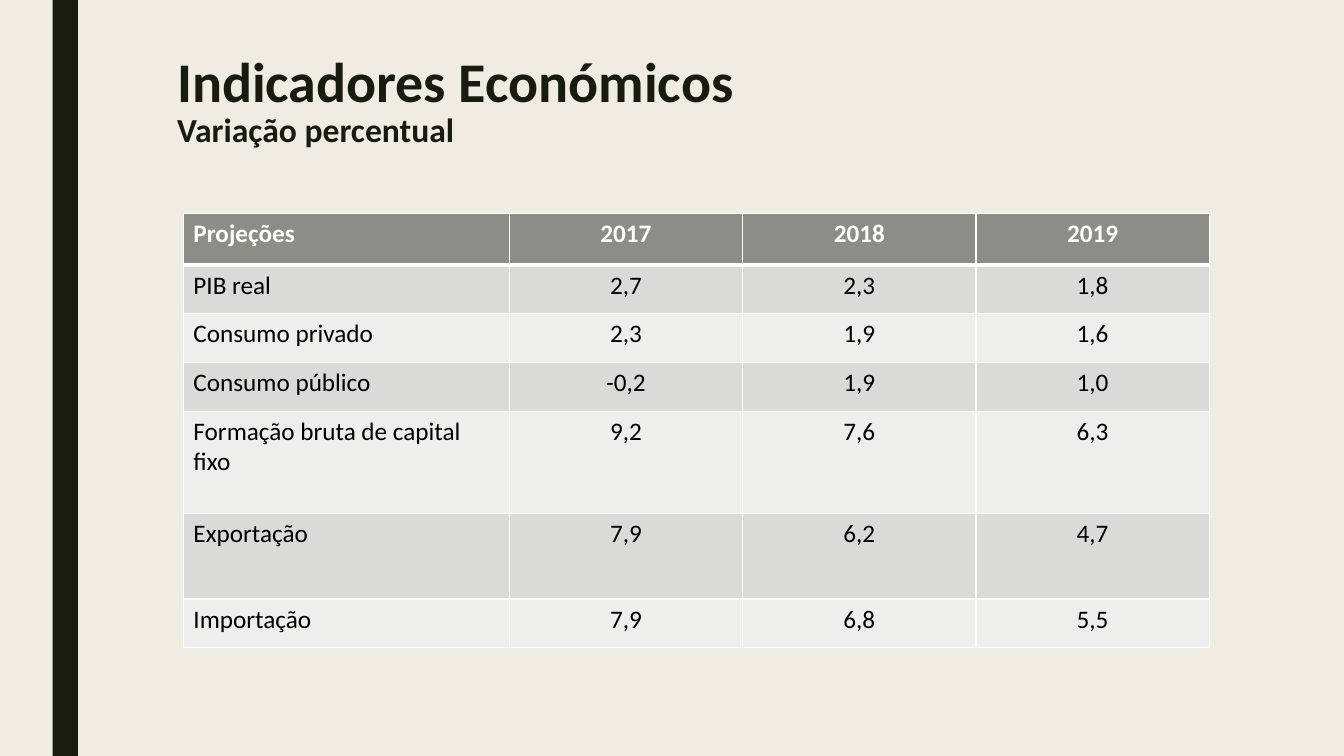
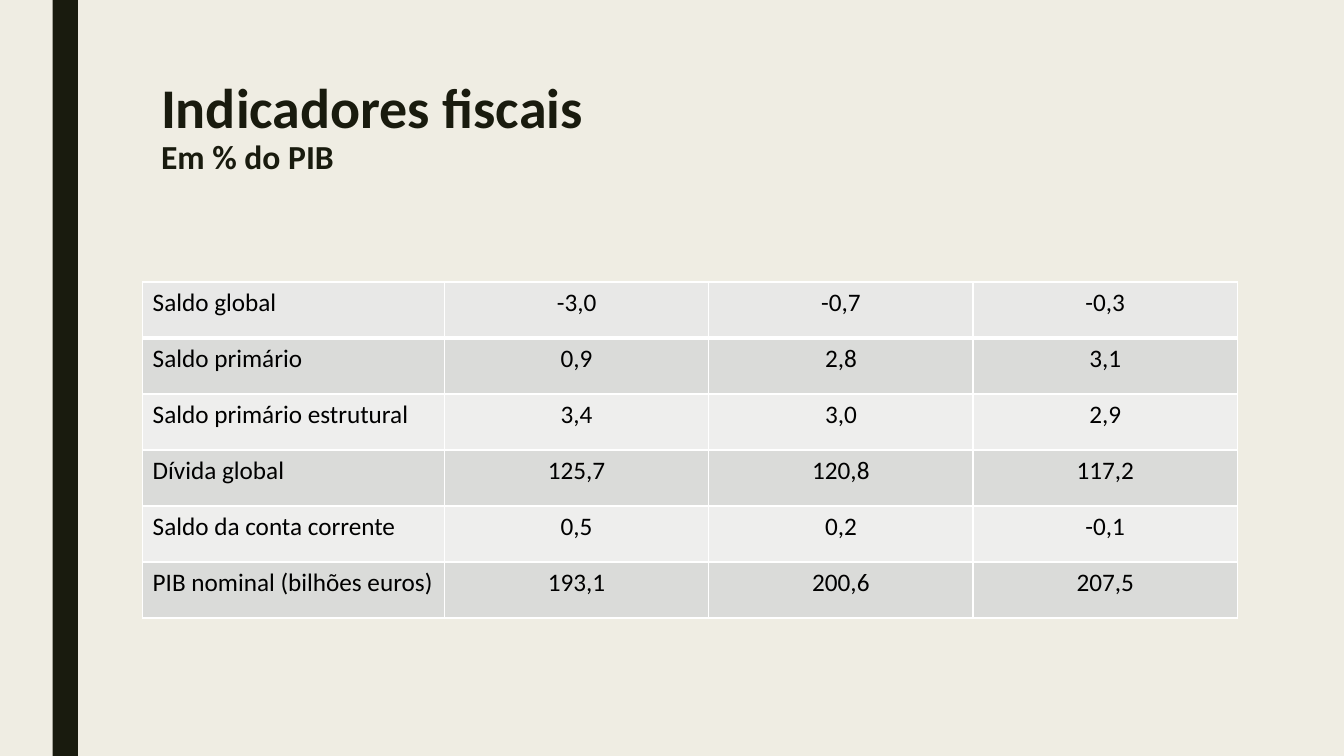
from lxml import etree
from pptx import Presentation
from pptx.dml.color import RGBColor
from pptx.enum.shapes import MSO_SHAPE
from pptx.enum.text import PP_ALIGN
from pptx.oxml.ns import qn
from pptx.util import Pt

RECT = MSO_SHAPE.RECTANGLE
LEFT, CENTER = PP_ALIGN.LEFT, PP_ALIGN.CENTER

FONT = "Calibri"
CREAM = RGBColor(0xEF, 0xED, 0xE3)
DARK = RGBColor(0x19, 0x1B, 0x0E)
BLACK = RGBColor(0, 0, 0)
WHITE = RGBColor(0xFF, 0xFF, 0xFF)
GRAY = RGBColor(0x8C, 0x8D, 0x86)
PALE = RGBColor(0xE8, 0xE8, 0xE7)
BANDS = RGBColor(0xDA, 0xDB, 0xD9), RGBColor(0xEE, 0xEE, 0xED)

# Content: places and sizes in points
SLIDES = [
    {
        "title": "Indicadores Económicos",
        "sub": "Variação percentual",
        "box": (119.5, 35.3, 756, 154.8),
        "spot": (131, 152.3),
        "cols": [232.8, 166.7, 166.7, 166.7],
        "heights": [37, 34.8, 34.8, 34.8, 73.4, 60.9, 34.8],
        "head": True,
        "rows": [
            ("Projeções", "2017", "2018", "2019"),
            ("PIB real", "2,7", "2,3", "1,8"),
            ("Consumo privado", "2,3", "1,9", "1,6"),
            ("Consumo público", "-0,2", "1,9", "1,0"),
            ("Formação bruta de capital fixo", "9,2", "7,6", "6,3"),
            ("Exportação", "7,9", "6,2", "4,7"),
            ("Importação", "7,9", "6,8", "5,5"),
        ],
    },
    {
        "title": "Indicadores fiscais",
        "sub": "Em % do PIB",
        "box": (108, 54, 756, 116.6),
        "spot": (101.9, 201.5),
        "cols": [215.6, 188.8, 188.8, 188.8],
        "heights": [40] * 6,
        "head": False,
        "rows": [
            ("Saldo global", "-3,0", "-0,7", "-0,3"),
            ("Saldo primário", "0,9", "2,8", "3,1"),
            ("Saldo primário estrutural", "3,4", "3,0", "2,9"),
            ("Dívida global", "125,7", "120,8", "117,2"),
            ("Saldo da conta corrente", "0,5", "0,2", "-0,1"),
            ("PIB nominal (bilhões euros)", "193,1", "200,6", "207,5"),
        ],
    },
]


def write(para, text, size=18, color=BLACK, bold=False, align=LEFT, space=1.0):
    para.alignment = align
    para.line_spacing = space
    run = para.add_run()
    run.text = text
    font = run.font
    font.name, font.size, font.bold = FONT, Pt(size), bold
    font.color.rgb = color


def add_base(slide):
    # Dark band at the left edge
    band = slide.shapes.add_shape(RECT, Pt(37.6), 0, Pt(18), Pt(540))
    band.shadow.inherit = False
    band.fill.solid()
    band.fill.fore_color.rgb = DARK
    band.line.fill.background()


def add_title(slide, data):
    box = slide.shapes.add_textbox(*map(Pt, data["box"]))
    frame = box.text_frame
    frame.word_wrap = True
    look = {"color": DARK, "bold": True, "space": 0.89}
    write(frame.paragraphs[0], data["title"], size=40, **look)
    write(frame.add_paragraph(), data["sub"], size=24, **look)


def add_edges(cell, row):
    # White rules, thick under the first row
    widths = {"L": 1, "R": 1, "T": 3 if row == 1 else 1, "B": 3 if row == 0 else 1}
    props = cell._tc.get_or_add_tcPr()
    for side, width in widths.items():
        edge = etree.SubElement(props, qn(f"a:ln{side}"), w=str(Pt(width)))
        fill = etree.SubElement(edge, qn("a:solidFill"))
        etree.SubElement(fill, qn("a:srgbClr"), val=str(WHITE))


def add_grid(slide, data):
    rows, cols, heights = data["rows"], data["cols"], data["heights"]
    area = (*data["spot"], sum(cols), sum(heights))
    table = slide.shapes.add_table(len(rows), len(cols), *map(Pt, area)).table
    table.first_row = data["head"]
    table.horz_banding = False
    for col, width in zip(table.columns, cols):
        col.width = Pt(width)
    for row, height in zip(table.rows, heights):
        row.height = Pt(height)
    for r, texts in enumerate(rows):
        head = data["head"] and r == 0
        if r == 0:
            fill = GRAY if head else PALE
        else:
            fill = BANDS[(r - 1) % 2]
        for c, text in enumerate(texts):
            cell = table.cell(r, c)
            add_edges(cell, r)
            cell.fill.solid()
            cell.fill.fore_color.rgb = fill
            write(cell.text_frame.paragraphs[0], text, bold=head,
                  color=WHITE if head else BLACK, align=CENTER if c else LEFT)


def main():
    deck = Presentation()
    deck.slide_width, deck.slide_height = Pt(960), Pt(540)
    back = deck.slide_master.background.fill
    back.solid()
    back.fore_color.rgb = CREAM
    for data in SLIDES:
        slide = deck.slides.add_slide(deck.slide_layouts[6])
        add_base(slide)
        add_title(slide, data)
        add_grid(slide, data)
    deck.save("out.pptx")


if __name__ == "__main__":
    main()
